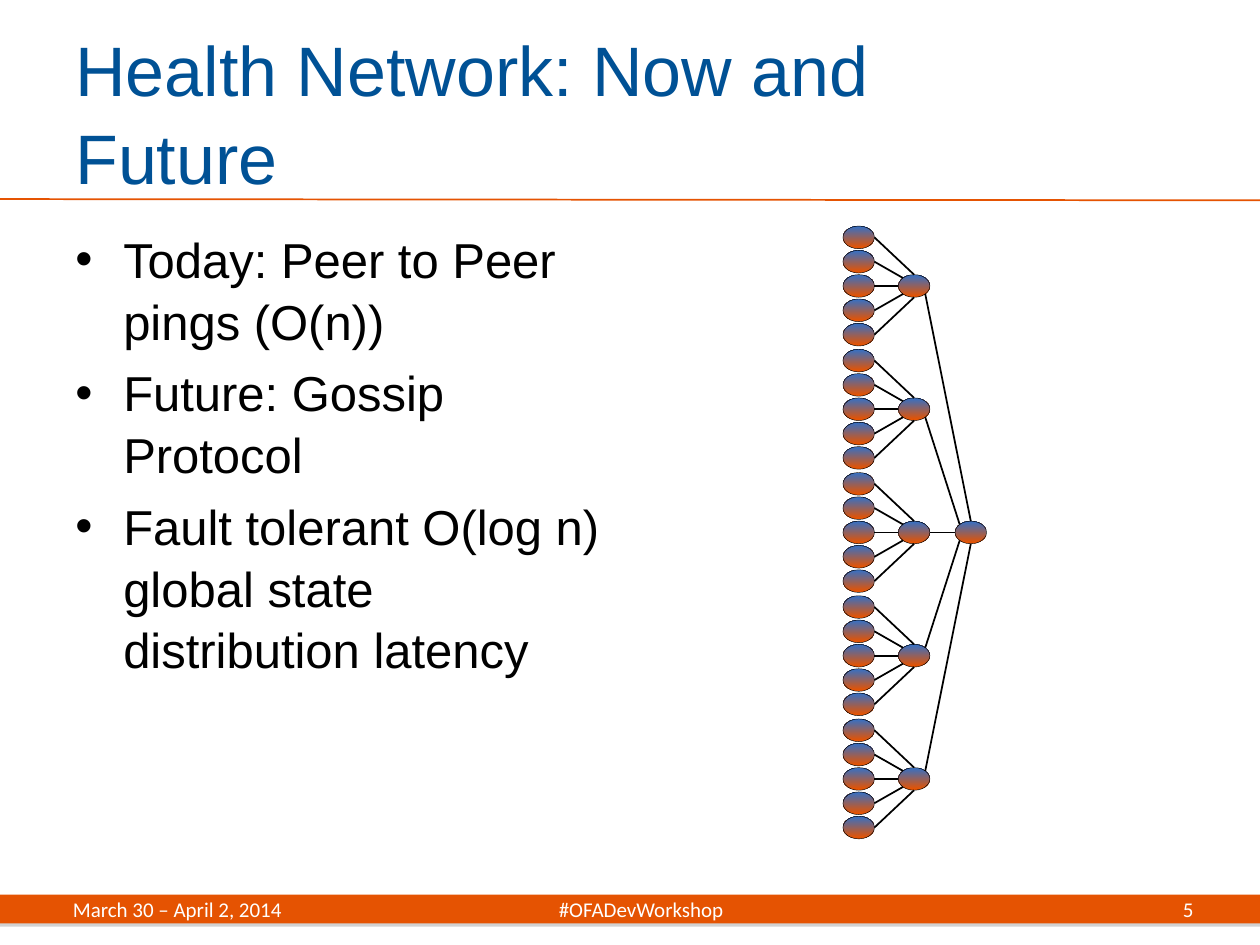
from typing import NamedTuple

from lxml.etree import SubElement
from pptx import Presentation
from pptx.dml.color import RGBColor
from pptx.enum.shapes import MSO_CONNECTOR, MSO_SHAPE
from pptx.enum.text import MSO_ANCHOR, PP_ALIGN
from pptx.oxml.ns import qn
from pptx.util import Inches, Pt

WIDTH, HEIGHT = 10, 7.5
ORANGE, BLUE, NODE_BLUE = "E55302", "005195", "3C6FBD"
BLACK, WHITE, GREY = "000000", "FFFFFF", "808080"

NODE_WIDTH, NODE_HEIGHT = 0.25, 0.18
LEAF_X, HUB_X, ROOT_X = 6.815, 7.255, 7.705
FIRST_HUB_Y, HUB_PITCH, LEAF_PITCH = 2.27, 0.978, 0.193
CLUSTERS = LEAVES = 5
DIAGONAL = 0.5 ** 0.5

# Directions from a node's centre to its rim, in half widths and half heights
RIGHT = (1, 0)
# Where five incoming links, from top to bottom, meet the receiving node
ENTRIES = [(0, -1), (-DIAGONAL, -DIAGONAL), (-1, 0), (-DIAGONAL, DIAGONAL), (0, 1)]
# Where the hubs, from top to bottom, send their link to the root
LOWER_RIGHT, UPPER_RIGHT = (DIAGONAL, DIAGONAL), (DIAGONAL, -DIAGONAL)
EXITS = [LOWER_RIGHT, LOWER_RIGHT, RIGHT, UPPER_RIGHT, UPPER_RIGHT]

BULLETS = [
    "Today: Peer to Peer pings (O(n))",
    "Future: Gossip Protocol",
    "Fault tolerant O(log n) global state distribution latency",
]


class Area(NamedTuple):
    left: float
    top: float
    width: float
    height: float


class Style(NamedTuple):
    font: str
    size: float
    colour: str
    line_spacing: float = 1.0


class Node(NamedTuple):
    x: float
    y: float

    def rim(self, direction: tuple) -> tuple:
        across, down = direction
        return self.x + across * NODE_WIDTH / 2, self.y + down * NODE_HEIGHT / 2


TITLE = Style("Arial", 40, BLUE, 1.05)
BODY = Style("Arial", 28, BLACK, 1.05)
FOOTER = Style("Calibri", 12, WHITE)


def colour(value: str) -> RGBColor:
    return RGBColor.from_string(value)


def add_text(page, area: Area, lines: list, style: Style, anchor=MSO_ANCHOR.MIDDLE):
    box = page.shapes.add_textbox(*map(Inches, area))
    frame = box.text_frame
    frame.word_wrap = True
    frame.vertical_anchor = anchor
    frame.text = "\n".join(lines)
    for paragraph in frame.paragraphs:
        paragraph.line_spacing = style.line_spacing
        for span in paragraph.runs:
            span.font.name = style.font
            span.font.size = Pt(style.size)
            span.font.color.rgb = colour(style.colour)
    return frame


def add_bullets(frame, indent: float, gap: float) -> None:
    for index, paragraph in enumerate(frame.paragraphs):
        if index:
            paragraph.space_before = Pt(gap)
        properties = paragraph._p.get_or_add_pPr()
        properties.set("marL", str(Inches(indent)))
        properties.set("indent", str(-Inches(indent)))
        SubElement(properties, qn("a:buFont"), typeface="Arial")
        SubElement(properties, qn("a:buChar"), char="•")


def add_centre_tab(paragraph, position: float) -> None:
    tabs = SubElement(paragraph._p.get_or_add_pPr(), qn("a:tabLst"))
    SubElement(tabs, qn("a:tab"), pos=str(Inches(position)), algn="ctr")


def add_line(shapes, start: tuple, end: tuple, line_colour: str) -> None:
    line = shapes.add_connector(MSO_CONNECTOR.STRAIGHT, *map(Inches, (*start, *end)))
    line.line.color.rgb = colour(line_colour)
    line.line.width = Pt(1)
    SubElement(line._element.spPr, qn("a:effectLst"))


def add_node(shapes, node: Node) -> None:
    left, top = node.x - NODE_WIDTH / 2, node.y - NODE_HEIGHT / 2
    oval = shapes.add_shape(
        MSO_SHAPE.OVAL, *map(Inches, (left, top, NODE_WIDTH, NODE_HEIGHT)))
    oval.shadow.inherit = False
    oval.fill.gradient()
    oval.fill.gradient_angle = 90
    shades = [(0.05, ORANGE), (0.95, NODE_BLUE)]
    for stop, (position, shade) in zip(oval.fill.gradient_stops, shades):
        stop.position = position
        stop.color.rgb = colour(shade)
    oval.line.color.rgb = colour(BLACK)
    oval.line.width = Pt(0.25)


def add_cluster(page, hub: Node) -> None:
    """Draw a hub with its column of leaves as one group."""
    shapes = page.shapes.add_group_shape().shapes
    leaves = [Node(LEAF_X, hub.y + (row - LEAVES // 2) * LEAF_PITCH)
              for row in range(LEAVES)]
    for node in (*leaves, hub):
        add_node(shapes, node)
    for leaf, entry in zip(leaves, ENTRIES):
        add_line(shapes, leaf.rim(RIGHT), hub.rim(entry), BLACK)


def add_network(page) -> None:
    hubs = [Node(HUB_X, FIRST_HUB_Y + row * HUB_PITCH) for row in range(CLUSTERS)]
    for hub in hubs:
        add_cluster(page, hub)
    root = Node(ROOT_X, hubs[CLUSTERS // 2].y)
    add_node(page.shapes, root)
    for hub, leave, entry in zip(hubs, EXITS, ENTRIES):
        add_line(page.shapes, hub.rim(leave), root.rim(entry), BLACK)


def add_footer_bar(page, area: Area) -> None:
    bar = page.shapes.add_shape(MSO_SHAPE.RECTANGLE, *map(Inches, area))
    bar.shadow.inherit = False
    bar.fill.solid()
    bar.fill.fore_color.rgb = colour(ORANGE)
    bar.line.fill.background()
    effects = bar._element.spPr.find(qn("a:effectLst"))
    shadow = SubElement(effects, qn("a:outerShdw"), blurRad="0",
                        dist=str(Pt(1.8)), dir="5400000", rotWithShape="0")
    shade = SubElement(shadow, qn("a:srgbClr"), val=GREY)
    SubElement(shade, qn("a:alpha"), val="35000")


def main() -> None:
    deck = Presentation()
    deck.slide_width, deck.slide_height = Inches(WIDTH), Inches(HEIGHT)
    page = deck.slides.add_slide(deck.slide_layouts[6])

    bar = Area(0, 7.1, WIDTH, 0.23)
    add_footer_bar(page, bar)
    add_line(page.shapes, (0, 1.58), (WIDTH, 1.59), ORANGE)

    add_text(page, Area(0.5, 0.25, 8.17, 1.25), ["Health Network: Now and Future"], TITLE)
    body = add_text(page, Area(0.5, 1.75, 4.42, 4.95), BULLETS, BODY, MSO_ANCHOR.TOP)
    add_bullets(body, indent=0.38, gap=0.2 * BODY.size)

    footer = add_text(page, Area(0.48, bar.top, 9.05, bar.height),
                      ["March 30 – April 2, 2014\t#OFADevWorkshop"], FOOTER)
    add_centre_tab(footer.paragraphs[0], 4.51)
    number = add_text(page, Area(8.38, bar.top, 1.19, bar.height), ["5"], FOOTER)
    number.paragraphs[0].alignment = PP_ALIGN.RIGHT

    add_network(page)
    deck.save("out.pptx")


if __name__ == "__main__":
    main()
